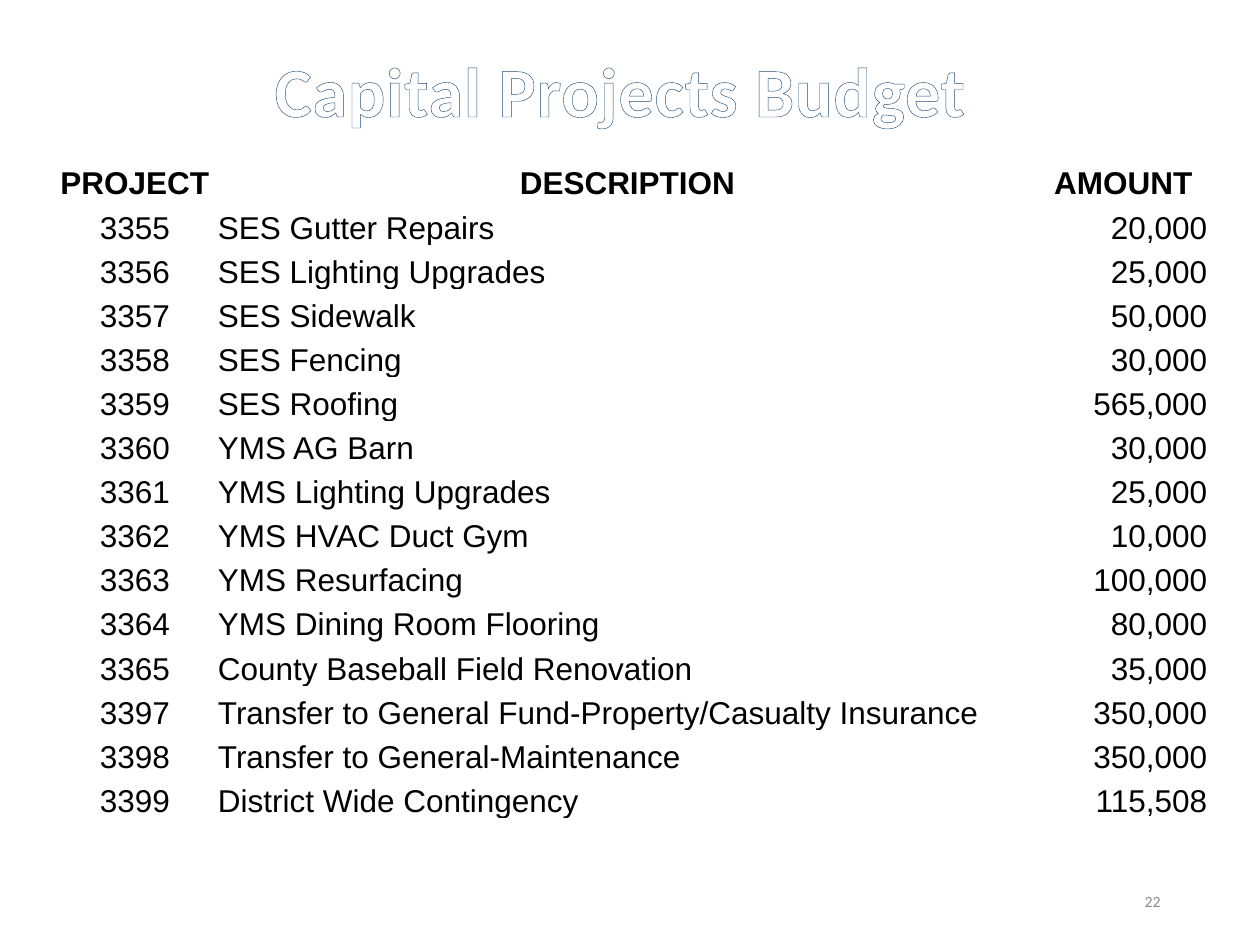
from dataclasses import dataclass
from typing import Any

from lxml.etree import SubElement
from pptx import Presentation
from pptx.dml.color import RGBColor
from pptx.enum.text import MSO_ANCHOR as Anchor, MSO_AUTO_SIZE as AutoSize, PP_ALIGN as Align
from pptx.oxml.ns import qn
from pptx.util import Inches, Pt

COLORS = {"text": "000000", "title": "FFFFFF", "outline": "1F4E79", "number": "8C8C8C"}
HEADINGS = ("PROJECT", "DESCRIPTION", "AMOUNT")
PROJECTS = [
    ("3355", "SES Gutter Repairs", "20,000"),
    ("3356", "SES Lighting Upgrades", "25,000"),
    ("3357", "SES Sidewalk", "50,000"),
    ("3358", "SES Fencing", "30,000"),
    ("3359", "SES Roofing", "565,000"),
    ("3360", "YMS AG Barn", "30,000"),
    ("3361", "YMS Lighting Upgrades", "25,000"),
    ("3362", "YMS HVAC Duct Gym", "10,000"),
    ("3363", "YMS Resurfacing", "100,000"),
    ("3364", "YMS Dining Room Flooring", "80,000"),
    ("3365", "County Baseball Field Renovation", "35,000"),
    ("3397", "Transfer to General Fund-Property/Casualty Insurance", "350,000"),
    ("3398", "Transfer to General-Maintenance", "350,000"),
    ("3399", "District Wide Contingency", "115,508"),
]


@dataclass
class BudgetSlide:
    """Draws styled elements on one slide, placed by percentages of its size."""

    presentation: Any
    slide: Any
    heading_font: str = "Calibri"
    table_font: str = "Arial"

    def box(self, left, top, width, height):
        across = self.presentation.slide_width / 100
        down = self.presentation.slide_height / 100
        return [round(share * unit) for share, unit in
                zip((left, top, width, height), (across, down, across, down))]

    def add_text(self, frame, text, align, font, size, color, bold=False):
        paragraph = frame.paragraphs[0]
        paragraph.alignment = align
        run = paragraph.add_run()
        run.text = text
        run.font.name = font
        run.font.size = Pt(size)
        run.font.bold = bold
        run.font.color.rgb = RGBColor.from_string(COLORS[color])
        return run

    def title(self, text, place):
        shape = self.slide.shapes.title
        shape.left, shape.top, shape.width, shape.height = self.box(*place)
        frame = shape.text_frame
        frame.word_wrap = True
        frame.auto_size = AutoSize.NONE
        frame.vertical_anchor = Anchor.BOTTOM
        run = self.add_text(frame, text, Align.LEFT, self.heading_font, 40, "title", True)
        properties = run._r.get_or_add_rPr()
        properties.set("spc", "50")
        outline = SubElement(properties, qn("a:ln"), w=str(Pt(1.05)))
        fill = SubElement(outline, qn("a:solidFill"))
        SubElement(fill, qn("a:srgbClr"), val=COLORS["outline"])
        properties.insert(0, outline)

    def table(self, rows, place, widths):
        left, top, width, height = self.box(*place)
        table = self.slide.shapes.add_table(
            len(rows), len(widths), left, top, width, height).table
        table.first_row = table.horz_banding = False
        for column, share in zip(table.columns, widths):
            column.width = round(width * share / sum(widths))
        for row_index, values in enumerate(rows):
            table.rows[row_index].height = round(height / len(rows))
            is_heading = row_index == 0
            for column_index, align in enumerate((Align.CENTER, Align.LEFT, Align.RIGHT)):
                cell = table.cell(row_index, column_index)
                cell.fill.background()
                cell.vertical_anchor = Anchor.BOTTOM
                cell.margin_left = cell.margin_right = cell.margin_top = Inches(0.01)
                cell.margin_bottom = 0
                self.add_text(cell.text_frame, values[column_index],
                              Align.CENTER if is_heading else align,
                              self.table_font, 18, "text", is_heading)

    def page_number(self, text, place):
        frame = self.slide.shapes.add_textbox(*self.box(*place)).text_frame
        frame.word_wrap = True
        frame.vertical_anchor = Anchor.MIDDLE
        self.add_text(frame, text, Align.RIGHT, self.heading_font, 9, "number")


def main():
    presentation = Presentation()
    presentation.slide_width, presentation.slide_height = Inches(10), Inches(7.5)
    slide = presentation.slides.add_slide(presentation.slide_layouts[5])
    budget = BudgetSlide(presentation, slide)
    budget.page_number("22", (70.6, 92.67, 22.5, 5.33))
    budget.title("Capital Projects Budget", (20.8, 2.27, 58.3, 12.27))
    budget.table([HEADINGS, *PROJECTS], (4.2, 16.67, 91.7, 70), (1.3, 6.52, 1.35))
    presentation.save("out.pptx")


if __name__ == "__main__":
    main()
